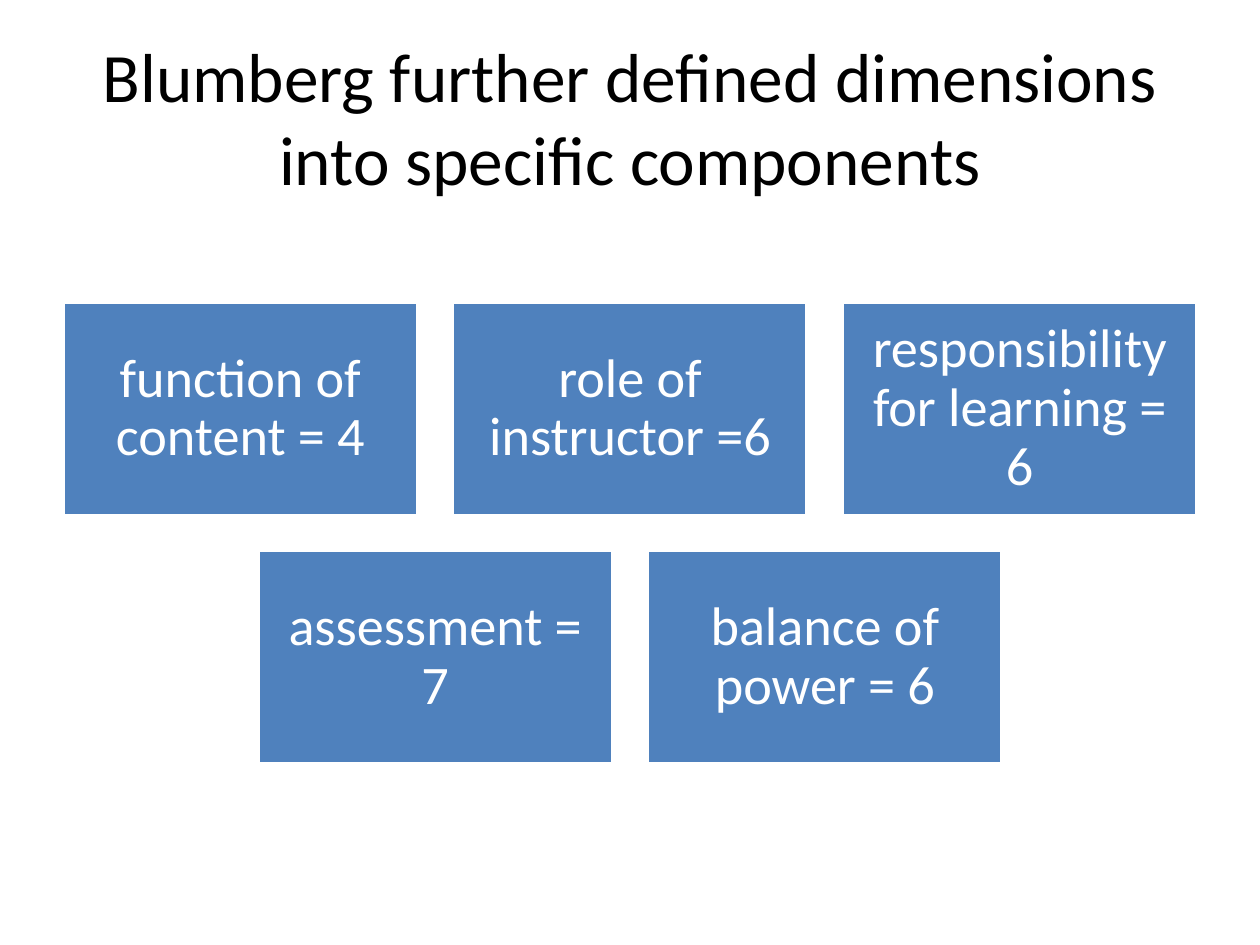
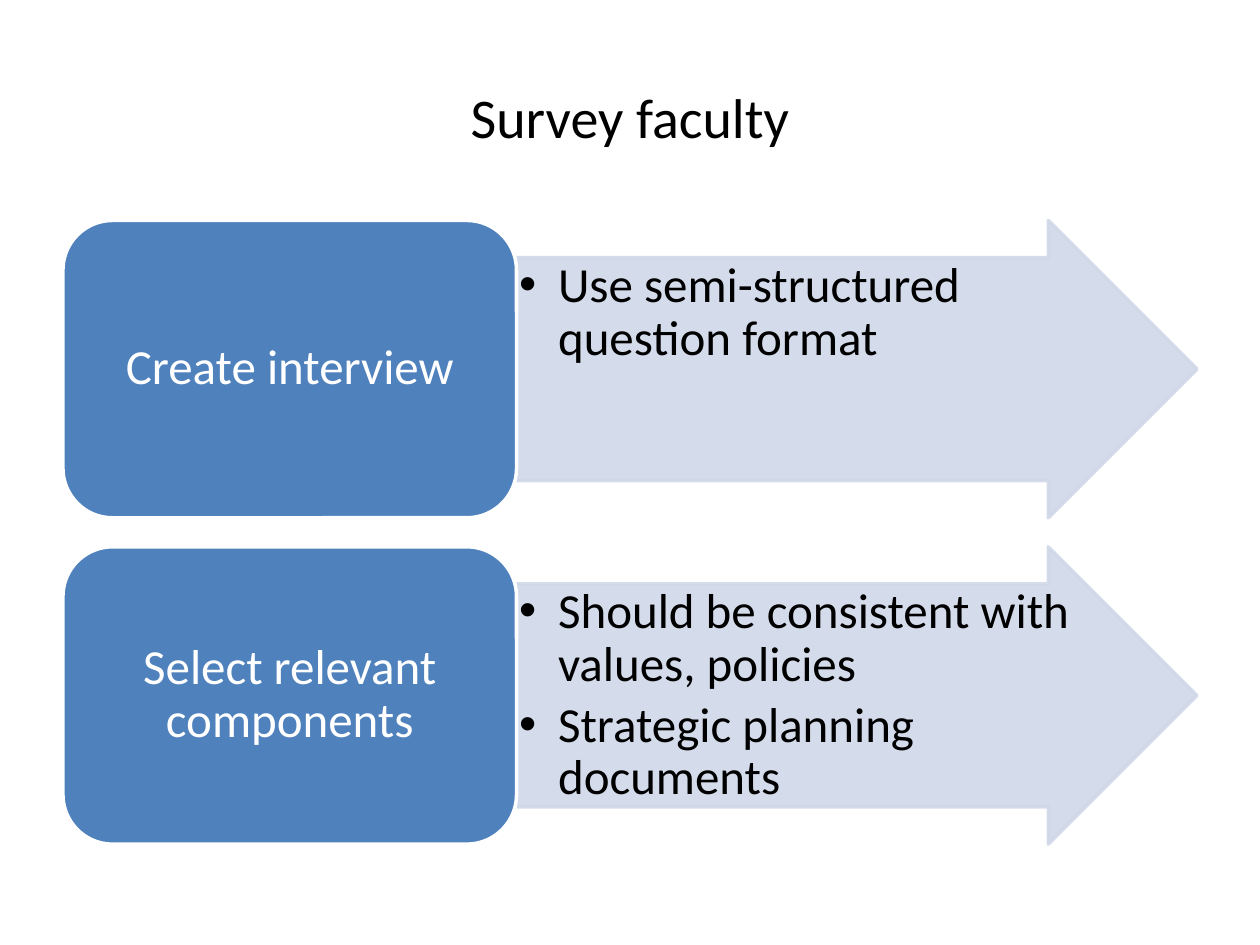
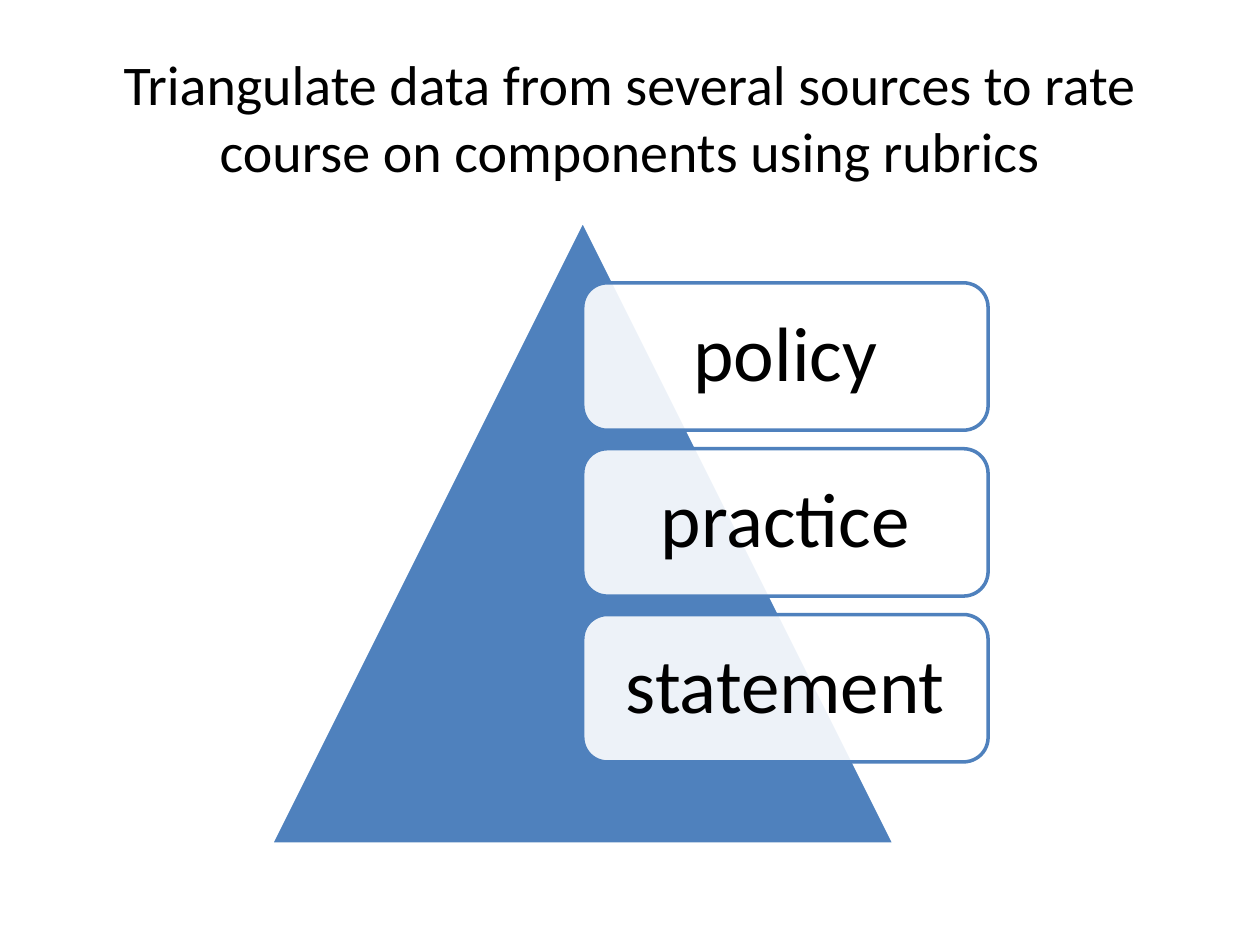
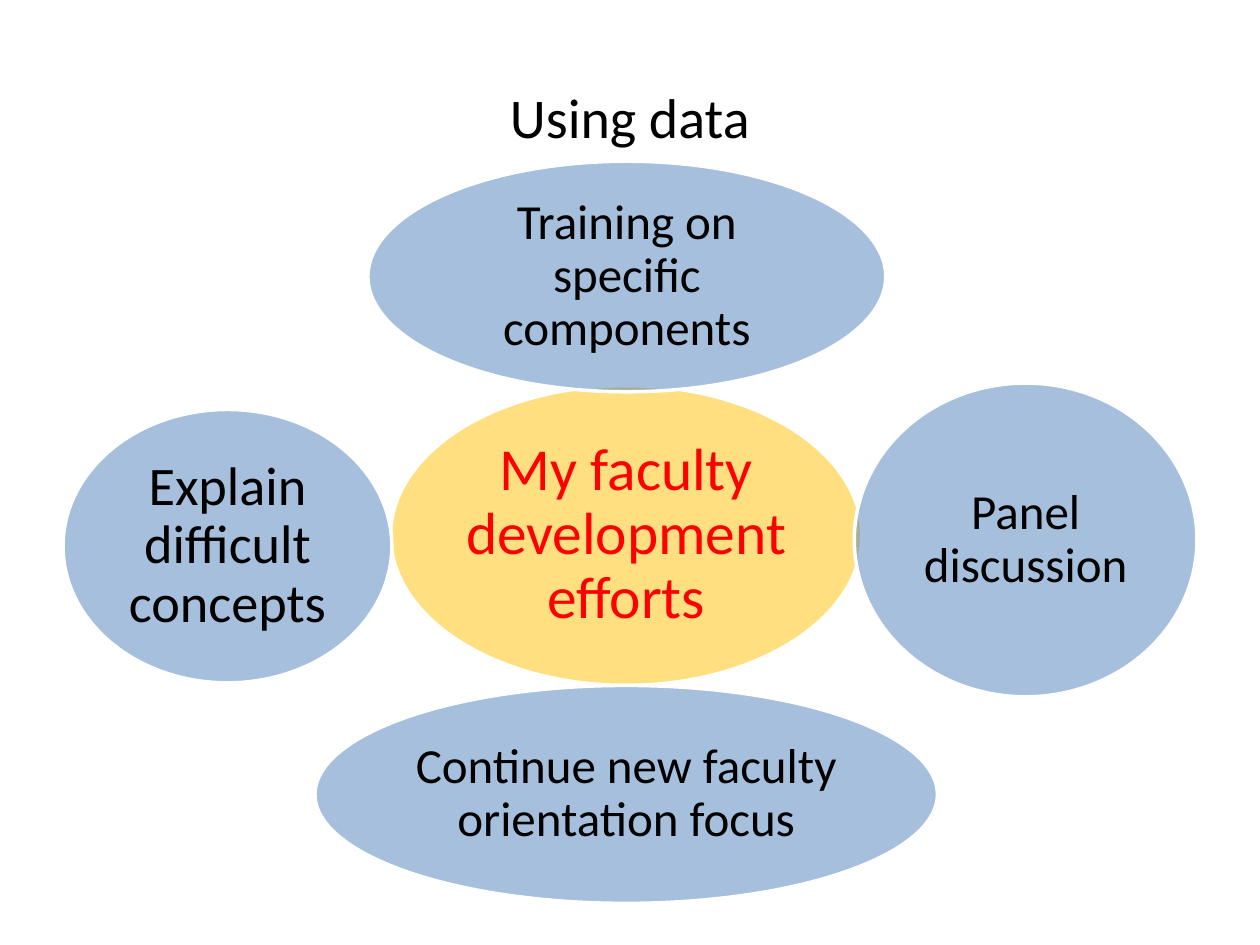
from collections import namedtuple
from dataclasses import dataclass

from lxml.etree import SubElement
from pptx import Presentation
from pptx.dml.color import RGBColor
from pptx.enum.shapes import MSO_SHAPE
from pptx.enum.text import MSO_ANCHOR, MSO_AUTO_SIZE, PP_ALIGN
from pptx.oxml.ns import qn
from pptx.util import Inches, Pt

Box = namedtuple("Box", "left top width height")
TITLE_BOX = Box(0.5, 0.3, 9, 1.25)
CONTENT_BOX = Box(0.5, 1.75, 9, 4.95)
TITLE_ONLY_LAYOUT = 5


@dataclass(frozen=True)
class Theme:
    """Colours, font and type sizes shared by all slides."""

    font: str = "Calibri"
    white: str = "FFFFFF"
    black: str = "000000"
    blue: str = "4F81BD"
    pale_blue: str = "D0D8E8"
    gold: str = "FFC000"
    red: str = "FF0000"
    line_width: float = 2
    large_title: float = 39.6
    title: float = 32
    body: float = 28
    tile: float = 31
    centre: float = 34
    card: float = 44


THEME = Theme()


def place(shape, box):
    """Move and size a shape to a box given in inches."""
    for name, value in box._asdict().items():
        setattr(shape, name, Inches(value))


def set_opacity(element, percent):
    """Make every colour inside an XML element partly transparent."""
    for colour in element.iter(qn("a:srgbClr")):
        SubElement(colour, qn("a:alpha"), val=str(percent * 1000))


def write(frame, paragraphs, size, colour, **formats):
    """Fill a text frame with paragraphs in one style."""
    frame.word_wrap = True
    frame.auto_size = MSO_AUTO_SIZE.NONE
    frame.vertical_anchor = MSO_ANCHOR.MIDDLE
    settings = {"alignment": PP_ALIGN.CENTER, "line_spacing": 0.9} | formats
    for index, text in enumerate(paragraphs):
        para = frame.add_paragraph() if index else frame.paragraphs[0]
        for name, value in settings.items():
            setattr(para, name, value)
        span = para.add_run()
        span.text = text
        span.font.name = THEME.font
        span.font.size = Pt(size)
        span.font.color.rgb = RGBColor.from_string(colour)


def set_margins(frame, across, down):
    """Set the side and the top and bottom insets of a text frame."""
    frame.margin_left = frame.margin_right = Inches(across)
    frame.margin_top = frame.margin_bottom = Inches(down)


def add_panel(page, kind, box, fill, line=THEME.white, opacity=100):
    """Add a preset shape with a fill and an outline."""
    panel = page.shapes.add_shape(kind, *map(Inches, box))
    panel.shadow.inherit = False
    panel.fill.solid()
    panel.fill.fore_color.rgb = RGBColor.from_string(fill)
    if opacity < 100:
        set_opacity(panel.element.spPr, opacity)
    panel.line.color.rgb = RGBColor.from_string(line)
    panel.line.width = Pt(THEME.line_width)
    return panel


def add_label(panel, text, size, colour, across, down):
    """Write a centred label inside a panel."""
    set_margins(panel.text_frame, across, down)
    write(panel.text_frame, [text], size, colour)


def add_page(deck, title, size=THEME.title):
    """Add a slide with its title."""
    page = deck.slides.add_slide(deck.slide_layouts[TITLE_ONLY_LAYOUT])
    place(page.shapes.title, TITLE_BOX)
    write(page.shapes.title.text_frame, [title], size, THEME.black, line_spacing=1.0)
    return page


def add_tile_rows(page, box, rows, columns=3, gap=0.28):
    """Lay out rows of equal tiles, each row centred in the box."""
    width = (box.width - gap * (columns - 1)) / columns
    height = (box.height - gap * (len(rows) - 1)) / len(rows)
    for row, labels in enumerate(rows):
        row_width = len(labels) * (width + gap) - gap
        left = box.left + (box.width - row_width) / 2
        top = box.top + row * (height + gap)
        for column, label in enumerate(labels):
            tile_box = Box(left + column * (width + gap), top, width, height)
            tile = add_panel(page, MSO_SHAPE.RECTANGLE, tile_box, THEME.blue)
            add_label(tile, label, THEME.tile, THEME.white, 0.13, 0.13)


def add_bullets(frame, items):
    """Write a bulleted list from the top of a text frame."""
    set_margins(frame, 0.02, 0.02)
    write(frame, items, THEME.body, THEME.black, alignment=PP_ALIGN.LEFT,
          level=1, space_after=Pt(4.2))
    frame.vertical_anchor = MSO_ANCHOR.TOP
    indent = Inches(0.31)
    for para in frame.paragraphs:
        properties = para._p.get_or_add_pPr()
        properties.set("marL", str(indent))
        properties.set("indent", str(-indent))
        SubElement(properties, qn("a:buFont"), typeface="Arial")
        SubElement(properties, qn("a:buChar"), char="•")


def add_step(page, box, name, details):
    """Add a named step with an arrow that holds its details."""
    name_width = box.width * 0.4
    arrow_box = box._replace(left=box.left + name_width, width=box.width - name_width)
    arrow = add_panel(page, MSO_SHAPE.RIGHT_ARROW, arrow_box, THEME.pale_blue,
                      THEME.pale_blue, 90)
    arrow.adjustments[0] = 0.75
    set_opacity(arrow.element.spPr.find(qn("a:ln")), 90)
    add_bullets(arrow.text_frame, details)
    step = add_panel(page, MSO_SHAPE.ROUNDED_RECTANGLE,
                     box._replace(width=name_width), THEME.blue)
    add_label(step, name, THEME.body, THEME.white, 0.12, 0.06)


def add_steps(page, box, steps, height=2.36):
    """Stack the steps evenly down the box."""
    pitch = (box.height - height) / (len(steps) - 1)
    for index, (name, details) in enumerate(steps):
        step_box = box._replace(top=box.top + index * pitch, height=height)
        add_step(page, step_box, name, details)


def add_pyramid(page, box, labels):
    """Add a triangle with a column of cards starting at its middle."""
    add_panel(page, MSO_SHAPE.ISOSCELES_TRIANGLE, box, THEME.blue)
    height = 1.17
    for index, label in enumerate(labels):
        card_box = Box(box.left + box.width / 2,
                       box.top + box.height / 10 + index * height * 9 / 8,
                       box.width * 0.65, height)
        card = add_panel(page, MSO_SHAPE.ROUNDED_RECTANGLE, card_box, THEME.white,
                         THEME.blue, 90)
        add_label(card, label, THEME.card, THEME.black, 0.18, 0.18)


def add_hub(page, box, ovals):
    """Add overlapping ovals at offsets from the corner of the box."""
    for label, offset, size, fill, colour in ovals:
        oval_box = offset._replace(left=box.left + offset.left, top=box.top + offset.top)
        oval = add_panel(page, MSO_SHAPE.OVAL, oval_box, fill, opacity=50)
        add_label(oval, label, size, colour, 0.04, 0.04)


def main():
    """Build and save the deck."""
    deck = Presentation()
    deck.slide_width, deck.slide_height = Inches(10), Inches(7.5)

    page = add_page(deck, "Blumberg further defined dimensions into specific components",
                    THEME.large_title)
    add_tile_rows(page, Box(0.5, 2.4, 9, 3.66), [
        ["function of content = 4", "role of instructor =6",
         "responsibility for learning = 6"],
        ["assessment = 7", "balance of power = 6"],
    ])

    page = add_page(deck, "Survey faculty")
    add_steps(page, CONTENT_BOX, [
        ("Create interview", ["Use semi-structured question format"]),
        ("Select relevant components",
         ["Should be consistent with values, policies", "Strategic planning documents"]),
    ])

    page = add_page(deck, "Triangulate data from several sources to rate course "
                          "on components using rubrics")
    add_pyramid(page, Box(2.15, 1.75, 4.95, 4.95), ["policy", "practice", "statement"])

    page = add_page(deck, "Using data")
    outer = (THEME.blue, THEME.black)
    add_hub(page, Box(0.5, 1.28, 9, 5.89), [
        ("My faculty development efforts", Box(2.6, 1.78, 3.74, 2.38),
         THEME.centre, THEME.gold, THEME.red),
        ("Training on specific components", Box(2.42, 0, 4.11, 1.83), THEME.body, *outer),
        ("Panel discussion", Box(6.28, 1.76, 2.72, 2.49), THEME.body, *outer),
        ("Continue new faculty orientation focus", Box(2, 4.16, 4.94, 1.73),
         THEME.body, *outer),
        ("Explain difficult concepts", Box(0, 1.97, 2.61, 2.17), THEME.tile, *outer),
    ])

    deck.save("out.pptx")


if __name__ == "__main__":
    main()
